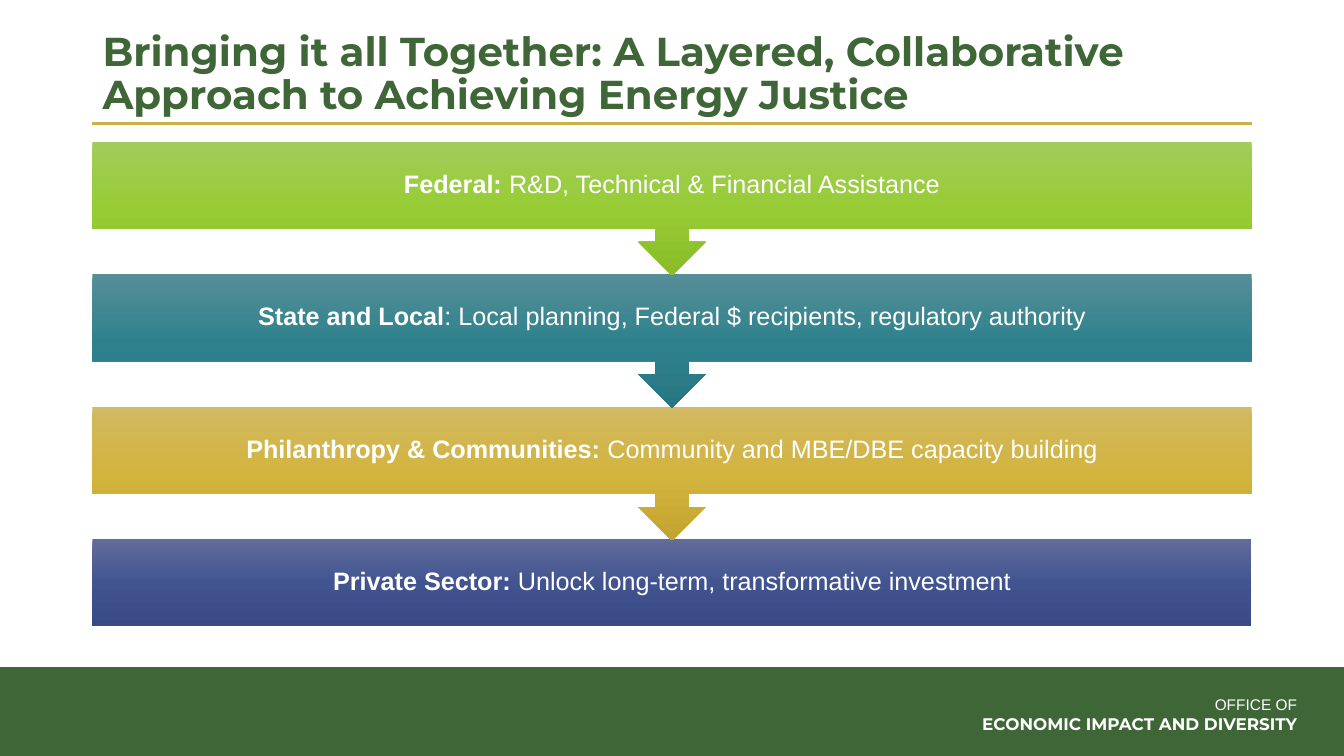
from copy import deepcopy

from lxml.etree import SubElement
from pptx import Presentation
from pptx.dml.color import RGBColor
from pptx.enum.shapes import MSO_CONNECTOR, MSO_SHAPE
from pptx.enum.text import MSO_ANCHOR, MSO_AUTO_SIZE, PP_ALIGN
from pptx.oxml.ns import qn
from pptx.util import Cm, Pt

WHITE = RGBColor(0xFF, 0xFF, 0xFF)
GREEN = RGBColor(0x3E, 0x66, 0x37)
GOLD = RGBColor(0xCB, 0xB0, 0x45)
LIME_FADE = (RGBColor(0xA1, 0xCC, 0x5C), RGBColor(0x98, 0xCC, 0x34), RGBColor(0x89, 0xBC, 0x28))
TEAL_FADE = (RGBColor(0x56, 0x8E, 0x97), RGBColor(0x2F, 0x82, 0x8D), RGBColor(0x26, 0x77, 0x81))
GOLD_FADE = (RGBColor(0xD2, 0xB9, 0x62), RGBColor(0xD2, 0xB4, 0x3E), RGBColor(0xC2, 0xA4, 0x30))
BLUE_FADE = (RGBColor(0x61, 0x6C, 0x9A), RGBColor(0x42, 0x54, 0x90), RGBColor(0x38, 0x49, 0x83))

LAYERS = [
    ("Federal: ", "R&D, Technical & Financial Assistance", LIME_FADE),
    ("State and Local", ": Local planning, Federal $ recipients, regulatory authority", TEAL_FADE),
    ("Philanthropy & Communities: ", "Community and MBE/DBE capacity building", GOLD_FADE),
    ("Private Sector: ", "Unlock long-term, transformative investment", BLUE_FADE),
]


def style(font, name, size, color, bold=False):
    """Set the face, size, colour and weight of a font."""
    font.name, font.size, font.bold = name, Pt(size), bold
    font.color.rgb = color


def pad(frame, size):
    """Wrap a text frame, centre it vertically and give it equal insets."""
    frame.word_wrap = True
    frame.vertical_anchor = MSO_ANCHOR.MIDDLE
    frame.margin_left = frame.margin_right = size
    frame.margin_top = frame.margin_bottom = size


def fade(shape, colors):
    """Fill a shape from top to bottom with three colours."""
    shape.fill.gradient()
    shape.fill.gradient_angle = 270
    stops = shape._element.spPr.find(qn("a:gradFill")).find(qn("a:gsLst"))
    stops.insert(1, deepcopy(stops[0]))
    for stop, place, color in zip(shape.fill.gradient_stops, (0, 0.5, 1), colors):
        stop.position = place
        stop.color.rgb = color


def add_head(slide, left, top, width, height):
    """Place the title in its box with a gold rule along the bottom."""
    title = slide.shapes.title
    title.left, title.top, title.width, title.height = left, top, width, height
    frame = title.text_frame
    frame.text = "Bringing it all Together: A Layered, Collaborative Approach to Achieving Energy Justice"
    frame.auto_size = MSO_AUTO_SIZE.NONE
    frame.word_wrap = True
    frame.vertical_anchor = MSO_ANCHOR.MIDDLE
    para = frame.paragraphs[0]
    para.alignment = PP_ALIGN.LEFT
    para.line_spacing = 0.9
    style(para.runs[0].font, "Montserrat", 28.8, GREEN, True)
    base = top + height
    rule = slide.shapes.add_connector(MSO_CONNECTOR.STRAIGHT, left, base, left + width, base)
    rule.line.color.rgb = GOLD
    rule.line.width = Pt(2)
    SubElement(rule._element.spPr, qn("a:effectLst"))


def add_layer(slide, kind, box, label, detail, colors):
    """Draw one band with a bold label and its detail."""
    band = slide.shapes.add_shape(kind, *box)
    band.shadow.inherit = False
    band.line.fill.background()
    fade(band, colors)
    pad(band.text_frame, Cm(0.36))
    para = band.text_frame.paragraphs[0]
    para.alignment = PP_ALIGN.CENTER
    para.line_spacing = 0.9
    for text, bold in ((label, True), (detail, False)):
        run = para.add_run()
        run.text = text
        style(run.font, "Arial", 18, WHITE, bold)


def add_stack(slide, left, top, width, height):
    """Stack the layers in a box, each pointing down to the next."""
    bar = Cm(2.19)
    step = (height - bar) // (len(LAYERS) - 1)
    last = len(LAYERS) - 1
    for i in reversed(range(len(LAYERS))):
        kind, tall = MSO_SHAPE.DOWN_ARROW_CALLOUT, Cm(3.37)
        if i == last:
            kind, tall = MSO_SHAPE.RECTANGLE, bar
        add_layer(slide, kind, (left, top + i * step, width, tall), *LAYERS[i])


def add_foot(slide, left, top, width, height):
    """Draw the green footer with the office name at the right."""
    band = slide.shapes.add_shape(MSO_SHAPE.RECTANGLE, left, top, width, height)
    band.shadow.inherit = False
    band.fill.solid()
    band.fill.fore_color.rgb = GREEN
    band.line.fill.background()
    wide = Cm(13.79)
    edge = left + width - Cm(1.18)
    note = slide.shapes.add_textbox(edge - wide, top + Cm(0.71), wide, Cm(0.99))
    frame = note.text_frame
    pad(frame, 0)
    frame.text = "OFFICE OF\nECONOMIC IMPACT AND DIVERSITY"
    looks = (("Arial", 11, WHITE), ("Montserrat", 12, WHITE, True))
    for para, look in zip(frame.paragraphs, looks):
        para.alignment = PP_ALIGN.RIGHT
        style(para.runs[0].font, *look)


def main():
    """Build and save the slide."""
    deck = Presentation()
    deck.slide_width, deck.slide_height = Cm(33.87), Cm(19.05)
    slide = deck.slides.add_slide(deck.slide_layouts[5])
    left, width = Cm(2.33), Cm(29.21)
    add_foot(slide, 0, Cm(16.81), deck.slide_width, Cm(2.24))
    add_head(slide, left, Cm(0.66), width, Cm(2.46))
    add_stack(slide, left, Cm(3.57), width, Cm(12.21))
    deck.save("out.pptx")


if __name__ == "__main__":
    main()
